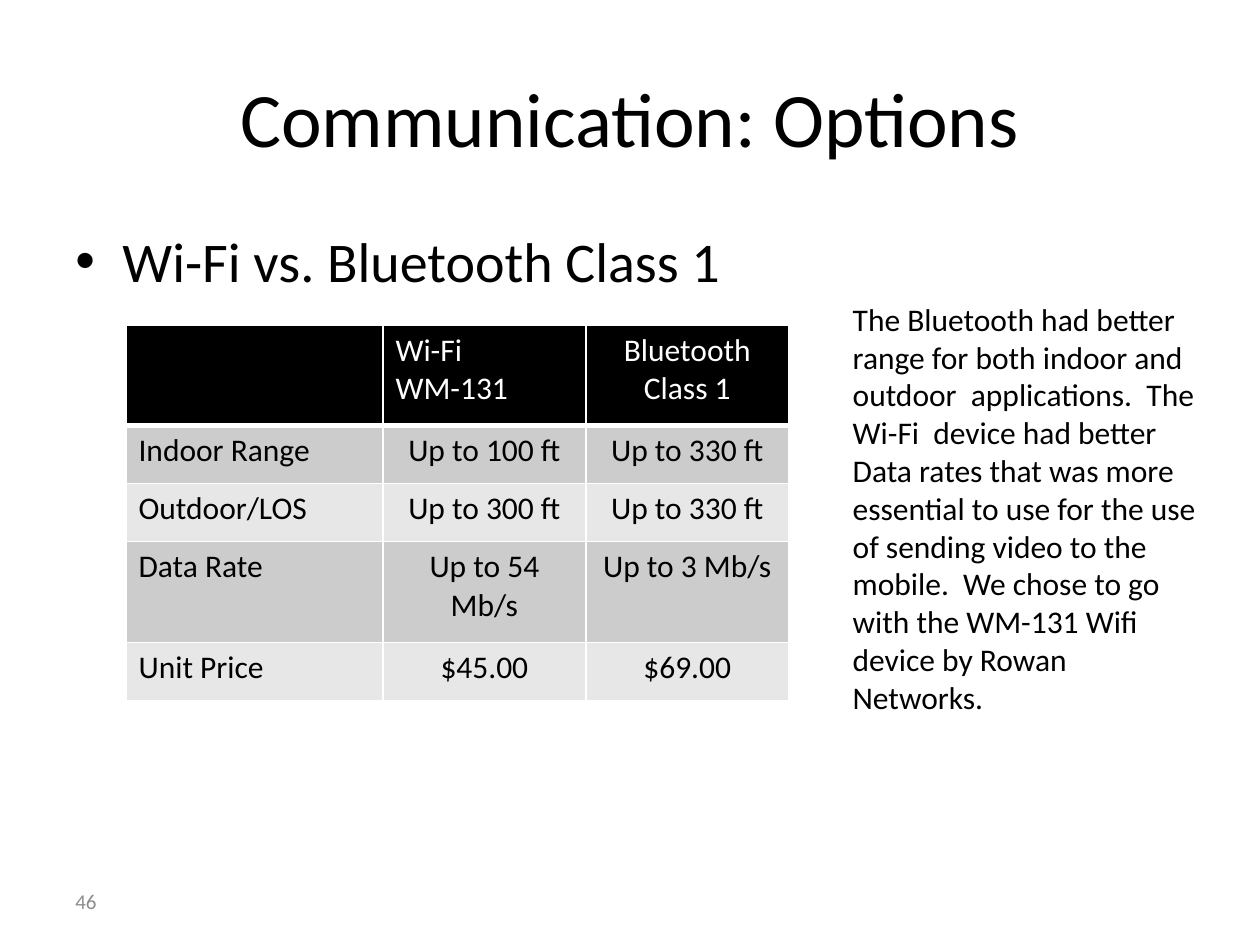
from dataclasses import dataclass

from lxml.etree import SubElement
from pptx import Presentation
from pptx.dml.color import RGBColor as RGB
from pptx.enum.text import MSO_ANCHOR as Anchor, PP_ALIGN as Align
from pptx.oxml.ns import qn
from pptx.util import Cm, Pt


@dataclass(frozen=True)
class Theme:
    font: str = "Calibri"
    title_size: int = 44
    bullet_size: int = 32
    body_size: int = 18
    number_size: int = 12
    ink: str = "000000"
    paper: str = "FFFFFF"
    muted: str = "8C8C8C"
    bands: tuple = ("CCCCCC", "E7E7E7")
    rule: int = 1
    header_rule: int = 3


THEME = Theme()

OPTIONS = [
    ["", "Wi-Fi WM-131", "Bluetooth Class 1"],
    ["Indoor Range", "Up to 100 ft", "Up to 330 ft"],
    ["Outdoor/LOS", "Up to 300 ft", "Up to 330 ft"],
    ["Data Rate", "Up to 54 Mb/s", "Up to 3 Mb/s"],
    ["Unit Price", "$45.00", "$69.00"],
]
COLUMN_WIDTHS = [5.18, 4.09, 4.09]
ROW_HEIGHTS = [2.03, 1.17, 1.17, 2.03, 1.17]

CONCLUSION = (
    "The Bluetooth had better range for both indoor and outdoor  applications.  "
    "The Wi-Fi  device had better Data rates that was more essential to use for "
    "the use of sending video to the mobile.  We chose to go with the WM-131 Wifi "
    "device by Rowan Networks."
)


def write(frame, text, size, color=THEME.ink, align=Align.LEFT):
    paragraph = frame.paragraphs[0]
    paragraph.alignment = align
    run = paragraph.add_run()
    run.text = text
    formats = {"name": THEME.font, "size": Pt(size), "bold": False}
    for name, value in formats.items():
        setattr(run.font, name, value)
    run.font.color.rgb = RGB.from_string(color)
    return paragraph


def add_text(slide, box, text, size, anchor=Anchor.TOP, **style):
    frame = slide.shapes.add_textbox(*map(Cm, box)).text_frame
    frame.word_wrap = True
    frame.vertical_anchor = anchor
    return write(frame, text, size, **style)


def add_bullet(paragraph, indent):
    properties = paragraph._p.get_or_add_pPr()
    properties.set("marL", str(indent))
    properties.set("indent", str(-indent))
    SubElement(properties, qn("a:buFont"), typeface="Arial")
    SubElement(properties, qn("a:buChar"), char="•")


def set_borders(cell, bottom):
    """Draw the four sides; call before the fill, which must follow them."""
    properties = cell._tc.get_or_add_tcPr()
    widths = {"L": THEME.rule, "R": THEME.rule, "T": THEME.rule, "B": bottom}
    for side, width in widths.items():
        line = SubElement(properties, qn(f"a:ln{side}"), w=str(Pt(width)))
        fill = SubElement(line, qn("a:solidFill"))
        SubElement(fill, qn("a:srgbClr"), val=THEME.paper)


def format_cell(cell, text, row, column):
    header = row == 0
    set_borders(cell, THEME.header_rule if header else THEME.rule)
    cell.fill.solid()
    fill = THEME.ink if header else THEME.bands[(row - 1) % 2]
    cell.fill.fore_color.rgb = RGB.from_string(fill)
    left = column == 0 or (row, column) == (0, 1)
    write(cell.text_frame, text, THEME.body_size,
          color=THEME.paper if header else THEME.ink,
          align=Align.LEFT if left else Align.CENTER)


def add_options_table(slide, left, top):
    size = Cm(sum(COLUMN_WIDTHS)), Cm(sum(ROW_HEIGHTS))
    table = slide.shapes.add_table(
        len(ROW_HEIGHTS), len(COLUMN_WIDTHS), Cm(left), Cm(top), *size).table
    for column, width in zip(table.columns, COLUMN_WIDTHS):
        column.width = Cm(width)
    for row, height in zip(table.rows, ROW_HEIGHTS):
        row.height = Cm(height)
    for row, texts in enumerate(OPTIONS):
        for column, text in enumerate(texts):
            format_cell(table.cell(row, column), text, row, column)


def main():
    presentation = Presentation()
    presentation.slide_width, presentation.slide_height = Cm(25.4), Cm(19.05)
    slide = presentation.slides.add_slide(presentation.slide_layouts[6])

    add_text(slide, (1.27, 0.76, 22.86, 3.18), "Communication: Options",
             THEME.title_size, Anchor.MIDDLE, align=Align.CENTER)
    add_text(slide, (1.27, 17.65, 5.92, 1.02), "46",
             THEME.number_size, Anchor.MIDDLE, color=THEME.muted)
    heading = add_text(slide, (1.27, 4.45, 22.86, 12.57),
                       "Wi-Fi vs. Bluetooth Class 1", THEME.bullet_size)
    add_bullet(heading, Cm(0.95))
    add_options_table(slide, 2.54, 6.55)
    add_text(slide, (16.94, 5.92, 7.42, 8.71), CONCLUSION, THEME.body_size)

    presentation.save("out.pptx")


if __name__ == "__main__":
    main()
